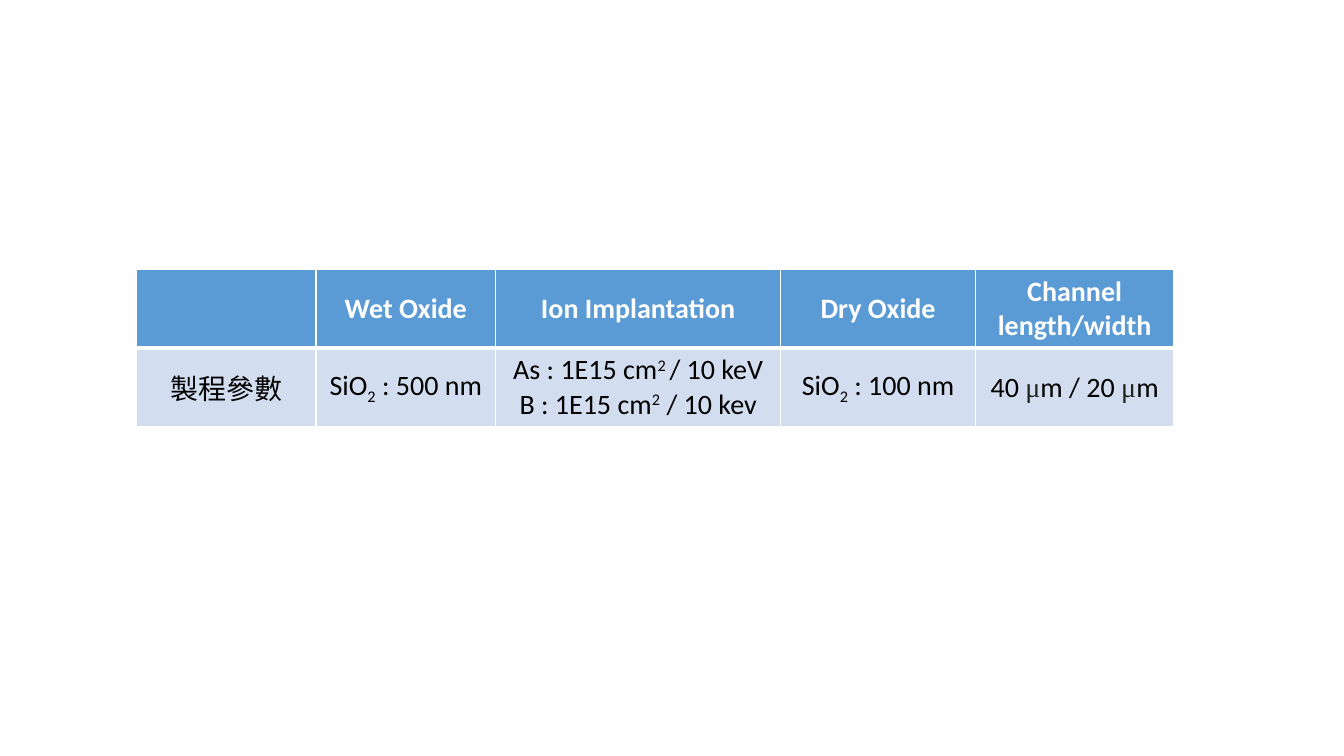
"""Build a slide with a table of process parameters."""
from lxml import etree
from pptx import Presentation
from pptx.dml.color import RGBColor
from pptx.enum import text
from pptx.oxml import ns
from pptx.util import Pt

COLORS = {"head": "5B9BD5", "body": "D2DEEF", "white": "FFFFFF",
          "black": "000000", "mu": "222222"}
WIDTHS = [128.2, 128.2, 203.8, 139, 141.8]
HEADS = ["", "Wet Oxide", "Ion Implantation", "Dry Oxide", "Channel length/width"]
SUB, SUP = -25000, 30000
VALUES = [
    [["製程參數"]],
    [["SiO", ("2", SUB), " : 500 nm"]],
    [["As : 1E15 cm", ("2 ", SUP), "/ 10 keV"],
     ["B : 1E15 cm", ("2", SUP), " / 10 kev"]],
    [["SiO", ("2", SUB), " : 100 nm"]],
    [["40 ", "μ", "m / 20 ", "μ", "m"]],
]


def rgb(name):
    """Return the named colour."""
    return RGBColor.from_string(COLORS[name])


def edge(cell, side, width):
    """Draw one white border of a cell."""
    line = etree.SubElement(cell._tc.get_or_add_tcPr(), ns.qn("a:ln" + side),
                            w=str(Pt(width)))
    fill = etree.SubElement(line, ns.qn("a:solidFill"))
    etree.SubElement(fill, ns.qn("a:srgbClr"), val=COLORS["white"])


def add_run(para, part, color, bold):
    """Add a run, given as text or as text with a baseline shift."""
    words, shift = part if isinstance(part, tuple) else (part, 0)
    run = para.add_run()
    run.text = words
    font = run.font
    font.size, font.bold = Pt(20), bold
    font.name = "Times New Roman" if words == "μ" else "Calibri"
    font.color.rgb = rgb("mu" if words == "μ" else color)
    if shift:
        run._r.get_or_add_rPr().set("baseline", str(shift))


def fill_cell(cell, lines, head):
    """Style a cell and write its lines."""
    for side, width in zip("LRTB", (1, 1, 1, 3) if head else (1, 1, 3, 1)):
        edge(cell, side, width)
    cell.fill.solid()
    cell.fill.fore_color.rgb = rgb("head" if head else "body")
    cell.vertical_anchor = text.MSO_ANCHOR.MIDDLE
    frame = cell.text_frame
    for i, parts in enumerate(lines):
        para = frame.add_paragraph() if i else frame.paragraphs[0]
        para.alignment = text.PP_ALIGN.CENTER
        for part in parts:
            add_run(para, part, "white" if head else "black", head)


def add_grid(slide):
    """Add the table of process parameters."""
    height = 55.3
    table = slide.shapes.add_table(2, len(WIDTHS), Pt(97.6), Pt(192.5),
                                   Pt(sum(WIDTHS)), Pt(2 * height)).table
    for row in table.rows:
        row.height = Pt(height)
    for i, width in enumerate(WIDTHS):
        table.columns[i].width = Pt(width)
        fill_cell(table.cell(0, i), [[HEADS[i]]] if HEADS[i] else [], True)
        fill_cell(table.cell(1, i), VALUES[i], False)


def main():
    """Build and save the slide."""
    deck = Presentation()
    deck.slide_width, deck.slide_height = Pt(960), Pt(540)
    add_grid(deck.slides.add_slide(deck.slide_layouts[6]))
    deck.save("out.pptx")


if __name__ == "__main__":
    main()
